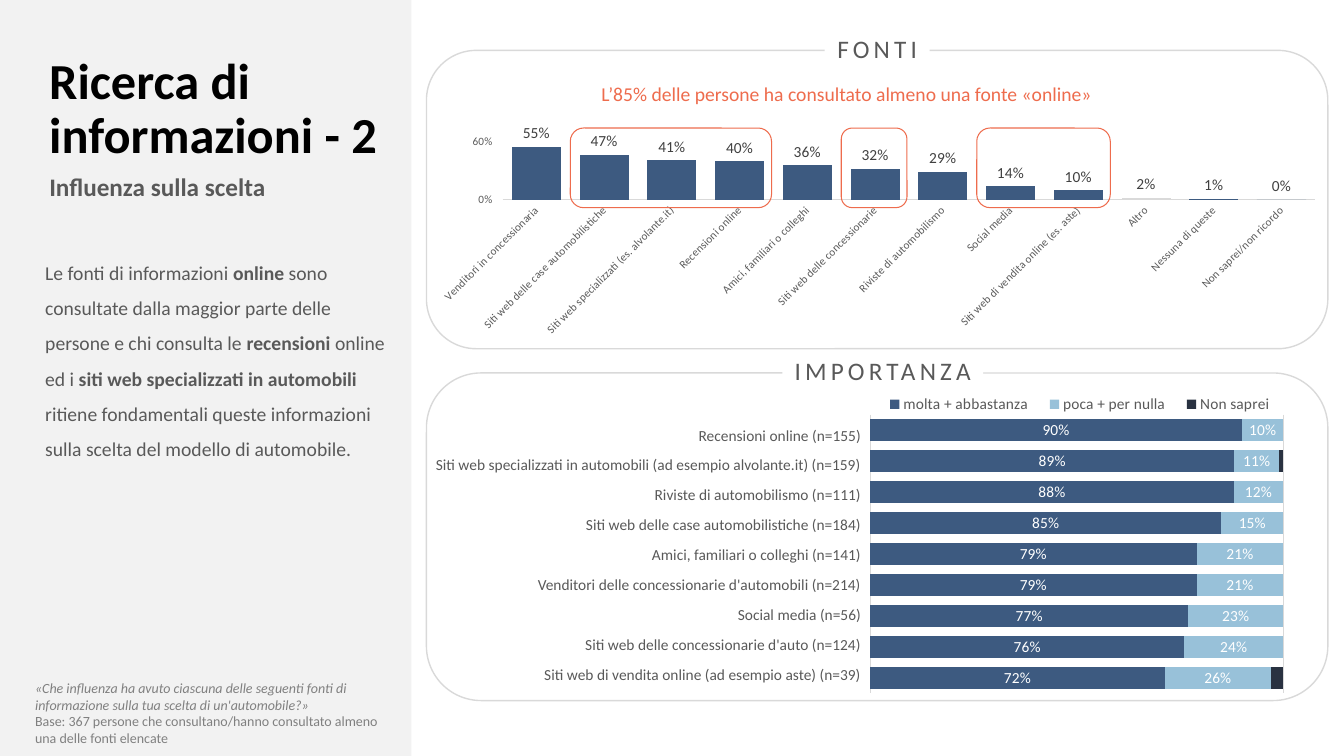
import collections
import lxml.etree
import pptx
import pptx.chart.data
import pptx.dml.color
import pptx.enum.chart
import pptx.enum.shapes
import pptx.enum.text
import pptx.oxml
import pptx.oxml.ns
import pptx.util

Inches, Pt = pptx.util.Inches, pptx.util.Pt
RGBColor = pptx.dml.color.RGBColor
Chart = pptx.enum.chart
Shape = pptx.enum.shapes.MSO_SHAPE
Anchor = pptx.enum.text.MSO_ANCHOR
Align = pptx.enum.text.PP_ALIGN
qn = pptx.oxml.ns.qn
Box = collections.namedtuple("Box", "left top width height")

FONT = "Calibri"
BLACK = RGBColor(0x00, 0x00, 0x00)
WHITE = RGBColor(0xFF, 0xFF, 0xFF)
PANEL_GREY = RGBColor(0xF2, 0xF2, 0xF2)
LINE_GREY = RGBColor(0xD9, 0xD9, 0xD9)
NOTE_GREY = RGBColor(0x80, 0x80, 0x80)
TEXT_GREY = RGBColor(0x59, 0x59, 0x59)
LABEL_GREY = RGBColor(0x40, 0x40, 0x40)
BLUE = RGBColor(0x3D, 0x5A, 0x80)
LIGHT_BLUE = RGBColor(0x98, 0xC1, 0xD9)
NAVY = RGBColor(0x29, 0x32, 0x41)
ORANGE = RGBColor(0xEE, 0x6C, 0x4D)

SOURCES = [
    ("Venditori in concessionaria", 0.55), ("Siti web delle case automobilistiche", 0.47),
    ("Siti web specializzati (es. alvolante.it)", 0.41), ("Recensioni online", 0.40),
    ("Amici, familiari o colleghi", 0.36), ("Siti web delle concessionarie", 0.32),
    ("Riviste di automobilismo", 0.29), ("Social media", 0.14),
    ("Siti web di vendita online (es. aste)", 0.10), ("Altro", 0.02),
    ("Nessuna di queste", 0.01), ("Non saprei/non ricordo", 0),
]
OTHER_INDEX = 9
ONLINE_GROUPS = [(1, 3), (5, 1), (7, 2)]  # first column, number of columns
IMPORTANCE = [
    ("Recensioni online (n=155)", 0.90, 0.10, 0),
    ("Siti web specializzati in automobili (ad esempio alvolante.it) (n=159)", 0.89, 0.11, 0.01),
    ("Riviste di automobilismo (n=111)", 0.88, 0.12, 0),
    ("Siti web delle case automobilistiche (n=184)", 0.85, 0.15, 0),
    ("Amici, familiari o colleghi (n=141)", 0.79, 0.21, 0),
    ("Venditori delle concessionarie d'automobili (n=214)", 0.79, 0.21, 0),
    ("Social media (n=56)", 0.77, 0.23, 0),
    ("Siti web delle concessionarie d'auto (n=124)", 0.76, 0.24, 0),
    ("Siti web di vendita online (ad esempio aste) (n=39)", 0.72, 0.26, 0.03),
]
RATINGS = [("molta + abbastanza", BLUE), ("poca + per nulla", LIGHT_BLUE), ("Non saprei", NAVY)]


def apply_format(target, **values):
    for name, value in values.items():
        setattr(target, name, value)


def format_font(font, size, color, **values):
    apply_format(font, name=FONT, size=Pt(size), **values)
    font.color.rgb = color


def inside(box, left, top, width, height):
    return Box(box.left + left, box.top + top, width, height)


def emu(box):
    return [Inches(value) for value in box]


def add_text(slide, box, paragraphs, size, color, anchor=Anchor.TOP, **paragraph_format):
    """Each paragraph is a list of (text, font values) runs."""
    frame = slide.shapes.add_textbox(*emu(box)).text_frame
    apply_format(frame, word_wrap=True, vertical_anchor=anchor)
    for index, runs in enumerate(paragraphs):
        paragraph = frame.add_paragraph() if index else frame.paragraphs[0]
        apply_format(paragraph, **paragraph_format)
        for text, values in runs:
            run = paragraph.add_run()
            run.text = text
            format_font(run.font, size, color, **values)


def add_box(slide, kind, box, fill=None, line=None, line_width=1):
    shape = slide.shapes.add_shape(kind, *emu(box))
    shape.shadow.inherit = False
    for part, color in ((shape.fill, fill), (shape.line.fill, line)):
        if color is None:
            part.background()
        else:
            part.solid()
            part.fore_color.rgb = color
    if line is not None:
        shape.line.width = Pt(line_width)
    return shape


def set_layout(element, position, x, y, width, height, inner=False):
    for old in element.findall(qn("c:layout")):
        element.remove(old)
    layout = lxml.etree.Element(qn("c:layout"))
    manual = lxml.etree.SubElement(layout, qn("c:manualLayout"))
    settings = [("layoutTarget", "inner")] if inner else []
    settings += [("xMode", "edge"), ("yMode", "edge"), ("x", x), ("y", y), ("w", width), ("h", height)]
    for name, value in settings:
        lxml.etree.SubElement(manual, qn("c:" + name)).set("val", str(value))
    element.insert(position, layout)


def add_bar_chart(slide, box, kind, categories, series, plot_layout):
    """Each series is (name, values, colour, label colour or None)."""
    data = pptx.chart.data.CategoryChartData(number_format="0%")
    data.categories = categories
    for name, values, _, _ in series:
        data.add_series(name, values)
    chart = slide.shapes.add_chart(kind, *emu(box), data).chart
    apply_format(chart, has_title=False, has_legend=False)
    format_font(chart.font, 10, BLACK)
    apply_format(chart.plots[0], gap_width=38, vary_by_categories=False)
    for drawn, (_, _, color, label_color) in zip(chart.plots[0].series, series):
        drawn.format.fill.solid()
        drawn.format.fill.fore_color.rgb = color
        if label_color is not None:
            labels = drawn.data_labels
            apply_format(labels, show_value=True, number_format="0%", number_format_is_linked=False)
            format_font(labels.font, 11, label_color)
    set_layout(chart._chartSpace.chart.plotArea, 0, *plot_layout, inner=True)
    return chart


def add_panel(slide, box, heading, heading_left, heading_width):
    add_box(slide, Shape.ROUNDED_RECTANGLE, box, line=LINE_GREY)
    title = add_box(slide, Shape.RECTANGLE, inside(box, heading_left, -0.22, heading_width, 0.4), WHITE)
    title.text_frame.word_wrap = False
    run = title.text_frame.paragraphs[0].add_run()
    run.text = heading
    format_font(run.font, 18, TEXT_GREY)
    run._r.get_or_add_rPr().set("spc", "300")


def add_sidebar(slide, box):
    add_box(slide, Shape.RECTANGLE, box, PANEL_GREY)
    bold = {"bold": True}
    add_text(slide, inside(box, 0.39, 0.5, 3.66, 1.19), [[("Ricerca di informazioni - 2", bold)]],
             36, BLACK, Anchor.MIDDLE, line_spacing=0.9)
    add_text(slide, inside(box, 0.39, 1.49, 3.59, 0.56), [[("Influenza sulla scelta", bold)]],
             18, TEXT_GREY, Anchor.MIDDLE, line_spacing=1.5)
    add_text(slide, inside(box, 0.35, 2.42, 3.59, 2.57), [[
        ("Le fonti di informazioni ", {}), ("online", bold),
        (" sono consultate dalla maggior parte delle persone e chi consulta le ", {}),
        ("recensioni ", bold), ("online ed i ", {}), ("siti web specializzati in automobili ", bold),
        ("ritiene fondamentali queste informazioni sulla scelta del modello di automobile.", {}),
    ]], 14, TEXT_GREY, line_spacing=1.5)
    add_text(slide, inside(box, 0.25, 6.69, 3.64, 0.77), [
        [("«Che influenza ha avuto ciascuna delle seguenti fonti di informazione sulla tua scelta "
          "di un'automobile?»", {"italic": True})],
        [("Base: 367 persone che consultano/hanno consultato almeno una delle fonti elencate", {})],
    ], 10, NOTE_GREY)


def add_sources(slide, box):
    # Column chart
    chart_box = inside(box, -0.25, 0.4, 9.3, 6.45)
    names, values = zip(*SOURCES)
    plot_layout = (0.108, 0.079, 0.867, 0.089)
    chart = add_bar_chart(slide, chart_box, Chart.XL_CHART_TYPE.COLUMN_CLUSTERED, names,
                          [("Fonti", values, BLUE, LABEL_GREY)], plot_layout)
    columns = chart.plots[0].series[0]
    columns.data_labels.position = Chart.XL_LABEL_POSITION.OUTSIDE_END
    other = columns.points[OTHER_INDEX].format.fill
    other.solid()
    other.fore_color.rgb = LINE_GREY
    for axis in (chart.category_axis, chart.value_axis):
        format_font(axis.tick_labels.font, 8, TEXT_GREY)
    apply_format(chart.category_axis, major_tick_mark=Chart.XL_TICK_MARK.NONE)
    chart.category_axis.format.line.color.rgb = LINE_GREY
    chart.category_axis.format.line.width = Pt(0.75)
    chart.category_axis._element.txPr.bodyPr.set("rot", "-2700000")
    apply_format(chart.value_axis, minimum_scale=0, maximum_scale=0.6, major_unit=0.6,
                 has_major_gridlines=False)
    chart.value_axis.format.line.fill.background()
    apply_format(chart.value_axis.tick_labels, number_format="0%", number_format_is_linked=False)

    # Frame, message and outlines around the online sources
    add_panel(slide, box, "FONTI", 3.95, 1.04)
    add_text(slide, inside(box, 1.57, 0.26, 5.2, 0.34),
             [[("L’85% delle persone ha consultato almeno una fonte «online»", {})]],
             14, ORANGE, alignment=Align.CENTER)
    step = chart_box.width * plot_layout[2] / len(SOURCES)
    plot_left = chart_box.width * plot_layout[0]
    for first, count in ONLINE_GROUPS:
        outline = inside(chart_box, plot_left + first * step, 0.37, count * step - 0.02, 0.79)
        add_box(slide, Shape.ROUNDED_RECTANGLE, outline, line=ORANGE, line_width=0.75)


def add_importance(slide, box):
    # Stacked bar chart
    names, *shares = zip(*IMPORTANCE)
    series = [(name, values, color, None if color == NAVY else WHITE)
              for (name, color), values in zip(RATINGS, shares)]
    chart = add_bar_chart(slide, inside(box, 0.26, -0.07, 8.52, 3.32),
                          Chart.XL_CHART_TYPE.BAR_STACKED_100,
                          [str(number + 1) for number in range(len(names))], series,
                          (0.486, 0.146, 0.481, 0.833))
    chart.plots[0].overlap = 100
    apply_format(chart.category_axis, visible=False, reverse_order=True)
    apply_format(chart.value_axis, visible=False, minimum_scale=0, maximum_scale=1, major_unit=1,
                 has_major_gridlines=True)
    grid = chart.value_axis.major_gridlines.format.line
    grid.color.rgb = LINE_GREY
    grid.width = Pt(0.75)
    chart.has_legend = True
    apply_format(chart.legend, position=Chart.XL_LEGEND_POSITION.TOP, include_in_layout=False)
    format_font(chart.legend.font, 11, TEXT_GREY)
    set_layout(chart.legend._element, 1, 0.49, 0.07, 0.48, 0.09)

    # Row labels
    table_box = inside(box, -0.02, 0.47, 4.34, 2.67)
    table = slide.shapes.add_table(len(names), 1, *emu(table_box)).table
    apply_format(table, first_row=False, horz_banding=False)
    for row, name in enumerate(names):
        cell = table.cell(row, 0)
        apply_format(cell, text=name, vertical_anchor=Anchor.MIDDLE, margin_left=Inches(0.01),
                     margin_right=Inches(0.01), margin_top=Inches(0.01), margin_bottom=0)
        cell.fill.solid()
        cell.fill.fore_color.rgb = WHITE
        paragraph = cell.text_frame.paragraphs[0]
        paragraph.alignment = Align.RIGHT
        format_font(paragraph.runs[0].font, 11, TEXT_GREY)
        for index, side in enumerate(("lnL", "lnR", "lnT", "lnB")):
            border = lxml.etree.Element(qn("a:" + side), w="12700")
            fill = lxml.etree.SubElement(border, qn("a:solidFill"))
            lxml.etree.SubElement(fill, qn("a:srgbClr")).set("val", str(WHITE))
            cell._tc.get_or_add_tcPr().insert(index, border)

    add_panel(slide, box, "IMPORTANZA", 3.53, 1.99)


def main():
    presentation = pptx.Presentation()
    apply_format(presentation, slide_width=Inches(13.33), slide_height=Inches(7.5))
    slide = presentation.slides.add_slide(presentation.slide_layouts[6])
    add_sidebar(slide, Box(0, 0, 4.08, 7.5))
    add_sources(slide, Box(4.23, 0.5, 8.94, 2.96))
    add_importance(slide, Box(4.23, 3.7, 8.94, 3.25))
    presentation.save("out.pptx")


if __name__ == "__main__":
    main()
